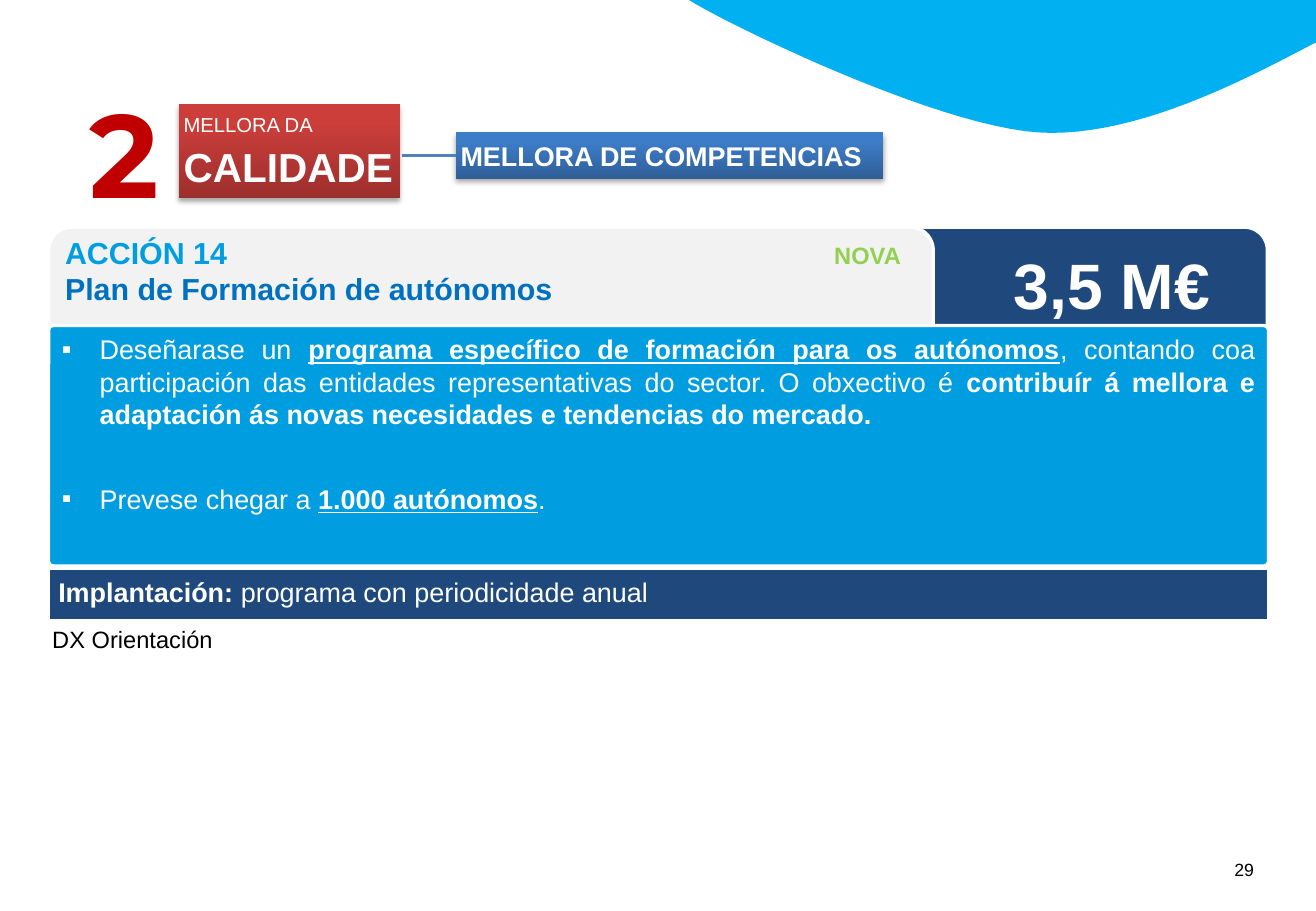
import pptx
import pptx.dml.color
import pptx.enum.shapes
import pptx.enum.text
import pptx.oxml
import pptx.oxml.ns
import pptx.util

Inches, Pt = pptx.util.Inches, pptx.util.Pt
Shape = pptx.enum.shapes.MSO_SHAPE
Anchor = pptx.enum.text.MSO_ANCHOR
Align = pptx.enum.text.PP_ALIGN

WHITE, BLACK, NAVY, SKY = "FFFFFF", "000000", "1F497D", "009EE0"
PLAIN = (0.1, 0.05, 0.1, 0.05)
BAND = (0.08, 0, 0.08, 0.04)
LABEL = (0.04, 0.05, 0.04, 0.05)


def colour(value):
    return pptx.dml.color.RGBColor.from_string(value)


def element(xml):
    """Parse a DrawingML fragment whose root lacks the namespace."""
    tag, rest = xml.split(" ", 1)
    return pptx.oxml.parse_xml(f"{tag} {pptx.oxml.ns.nsdecls('a')} {rest}")


def cubic(start, first, second, end, steps=24):
    """Points along a cubic curve, without its start."""
    for step in range(1, steps + 1):
        t = step / steps
        weights = ((1 - t) ** 3, 3 * t * (1 - t) ** 2, 3 * t * t * (1 - t), t ** 3)
        points = (start, first, second, end)
        yield tuple(sum(w * p[axis] for w, p in zip(weights, points)) for axis in (0, 1))


class Builder:
    font = "Arial"

    def __init__(self, slide):
        self.slide = slide
        self.shapes = slide.shapes

    def place(self, shape, at):
        shape.left, shape.top, shape.width, shape.height = map(Inches, at)

    def paint(self, shape, fill, line=None):
        if isinstance(fill, tuple):
            shape.fill.gradient()
            shape.fill.gradient_angle = 90
            for stop, value, position in zip(shape.fill.gradient_stops, fill, (0, 0.8)):
                stop.color.rgb = colour(value)
                stop.position = position
        else:
            shape.fill.solid()
            shape.fill.fore_color.rgb = colour(fill)
        if line:
            shape.line.color.rgb = colour(line)
            shape.line.width = Pt(2)
        else:
            shape.line.fill.background()
        shape.shadow.inherit = False

    def shape(self, kind, at, fill, line=None, corner=None):
        shape = self.shapes.add_shape(kind, *map(Inches, at))
        self.paint(shape, fill, line)
        if corner is not None:
            shape.adjustments[0] = corner
        return shape

    def curve(self, points, fill):
        start, *rest = [tuple(map(Inches, point)) for point in points]
        outline = self.shapes.build_freeform(*start)
        outline.add_line_segments(rest, close=True)
        self.paint(outline.convert_to_shape(), fill)

    def cast_shadow(self, shape):
        shape.shadow.inherit = False
        effects = shape._element.spPr.find(pptx.oxml.ns.qn("a:effectLst"))
        effects.append(element(
            f'<a:outerShdw blurRad="{Pt(3.1)}" dist="{Pt(1.8)}" dir="5400000" rotWithShape="0">'
            '<a:srgbClr val="000000"><a:alpha val="35000"/></a:srgbClr></a:outerShdw>'))

    def placeholder(self, shape, at):
        """Move a template placeholder into position, in front of what is drawn so far."""
        self.place(shape, at)
        self.shapes._spTree.append(shape._element)
        return shape

    def textbox(self, at):
        return self.shapes.add_textbox(*map(Inches, at))

    def frame(self, shape, insets=PLAIN, anchor=Anchor.TOP, wrap=True):
        frame = shape.text_frame
        frame.word_wrap = wrap
        frame.auto_size = pptx.enum.text.MSO_AUTO_SIZE.NONE
        frame.vertical_anchor = anchor
        frame.margin_left, frame.margin_top, frame.margin_right, frame.margin_bottom = map(
            Inches, insets)
        return frame

    def para(self, frame, spans, align=Align.LEFT, after=0, spacing=1.0,
             bullet=None, tab=None):
        """Spans are (text, size, colour, bold, underline)."""
        para = frame.paragraphs[0]
        if para.runs:
            para = frame.add_paragraph()
        properties = para._p.get_or_add_pPr()
        if bullet:
            properties.set("marL", str(Inches(0.31)))
            properties.set("indent", str(-Inches(0.31)))
            properties.append(element('<a:buFont typeface="Arial"/>'))
            properties.append(element(f'<a:buChar char="{bullet}"/>'))
        if tab:
            properties.append(element(
                f'<a:tabLst ><a:tab pos="{Inches(tab)}" algn="l"/></a:tabLst>'))
        para.alignment = align
        para.space_before, para.space_after = Pt(0), Pt(after)
        para.line_spacing = spacing
        for text, size, ink, bold, underline in spans:
            span = para.add_run()
            span.text = text
            span.font.name = self.font
            span.font.size = Pt(size)
            span.font.bold = bold
            span.font.underline = underline
            span.font.color.rgb = colour(ink)
        return para

    def connector(self, start, end, ink, target, site):
        line = self.shapes.add_connector(
            pptx.enum.shapes.MSO_CONNECTOR.STRAIGHT, *map(Inches, start + end))
        line.end_connect(target, site)
        line.line.color.rgb = colour(ink)
        line.line.width = Pt(2)
        line._element.spPr.append(element("<a:effectLst />"))


def main():
    deck = pptx.Presentation()
    deck.slide_width, deck.slide_height = Inches(10.83), Inches(7.5)
    slide = deck.slides.add_slide(deck.slide_layouts[1])
    build = Builder(slide)

    # Curved corner and page number
    crest = (8.54, 1.09)
    build.curve([(5.67, 0),
                 *cubic((5.67, 0), (5.97, 0.19), (7.68, 1.03), crest),
                 *cubic(crest, (9.4, 1.15), (10.45, 0.54), (10.83, 0.35)),
                 (10.83, 0)], "00B0F0")
    number = build.textbox((10.06, 7.02, 0.47, 0.28))
    build.para(build.frame(number), [("29", 10.5, BLACK, False, False)])

    # Action header with its budget
    build.shape(Shape.ROUND_2_SAME_RECTANGLE, (3.84, 1.87, 6.59, 1.14), NAVY, WHITE)
    action = build.shape(Shape.ROUND_2_SAME_RECTANGLE, (0.4, 1.87, 7.28, 1.14), "F2F2F2", WHITE)
    frame = build.frame(action, BAND)
    build.para(frame, [("ACCIÓN 14\t", 18, SKY, True, False),
                       ("NOVA", 14, "92D050", True, False)], tab=6.33)
    build.para(frame, [("Plan de Formación de autónomos", 18, "0070C0", True, False)])

    # Description
    build.shape(Shape.ROUNDED_RECTANGLE, (0.4, 2.68, 10.04, 1.98), SKY, WHITE, corner=0.02)
    body = build.placeholder(slide.placeholders[1], (0.41, 2.69, 10.02, 1.96))
    frame = build.frame(body)
    build.para(frame, [
        ("Deseñarase un ", 16, WHITE, False, False),
        ("programa específico de formación para os autónomos", 16, WHITE, True, True),
        (", contando coa participación das entidades representativas do sector. "
         "O obxectivo é ", 16, WHITE, False, False),
        ("contribuír á mellora e adaptación ás novas necesidades e tendencias do mercado.",
         16, WHITE, True, False)], Align.JUSTIFY, after=31, bullet="▪")
    build.para(frame, [
        ("Prevese chegar a ", 16, WHITE, False, False),
        ("1.000 autónomos", 16, WHITE, True, True),
        (".", 16, WHITE, False, False)], Align.JUSTIFY, after=6, bullet="▪")

    budget = build.textbox((8.1, 1.97, 2.1, 0.74))
    build.para(build.frame(budget), [("3,5 M€", 38, WHITE, True, False)], Align.CENTER)

    # Implementation and responsible unit
    schedule = build.shape(Shape.RECTANGLE, (0.4, 4.68, 10.04, 0.43), NAVY, WHITE)
    build.para(build.frame(schedule, BAND, Anchor.MIDDLE), [
        ("Implantación:", 16, WHITE, True, False),
        (" programa con periodicidade anual", 16, WHITE, False, False)], after=6)
    unit = build.textbox((0.35, 5.06, 2.77, 0.45))
    build.para(build.frame(unit, BAND, Anchor.MIDDLE),
               [("DX Orientación", 14, BLACK, False, False)], after=6)

    # Section heading
    quality = build.shape(Shape.RECTANGLE, (1.47, 0.86, 1.82, 0.77), ("9C2F2D", "CB3E3A"))
    build.cast_shadow(quality)
    frame = build.frame(quality, LABEL)
    build.para(frame, [("MELLORA DA", 12, WHITE, False, False)], spacing=1.1)
    build.para(frame, [("CALIDADE", 24, WHITE, True, False)], spacing=1.1)

    section = build.textbox((0.64, 0.61, 0.86, 1.28))
    para = build.para(build.frame(section, wrap=False), [("2", 70, "C00000", True, False)])
    para.runs[0].font.name = "Montserrat"

    title = build.placeholder(slide.shapes.title, (3.75, 1.09, 3.52, 0.38))
    build.paint(title, ("2F5F99", "3D7CC7"))
    build.cast_shadow(title)
    build.para(build.frame(title, LABEL, Anchor.MIDDLE),
               [("MELLORA DE COMPETENCIAS", 16, WHITE, True, False)])
    build.connector((3.31, 1.28), (3.75, 1.28), "4F81BD", title, 1)

    deck.save("out.pptx")


if __name__ == "__main__":
    main()
